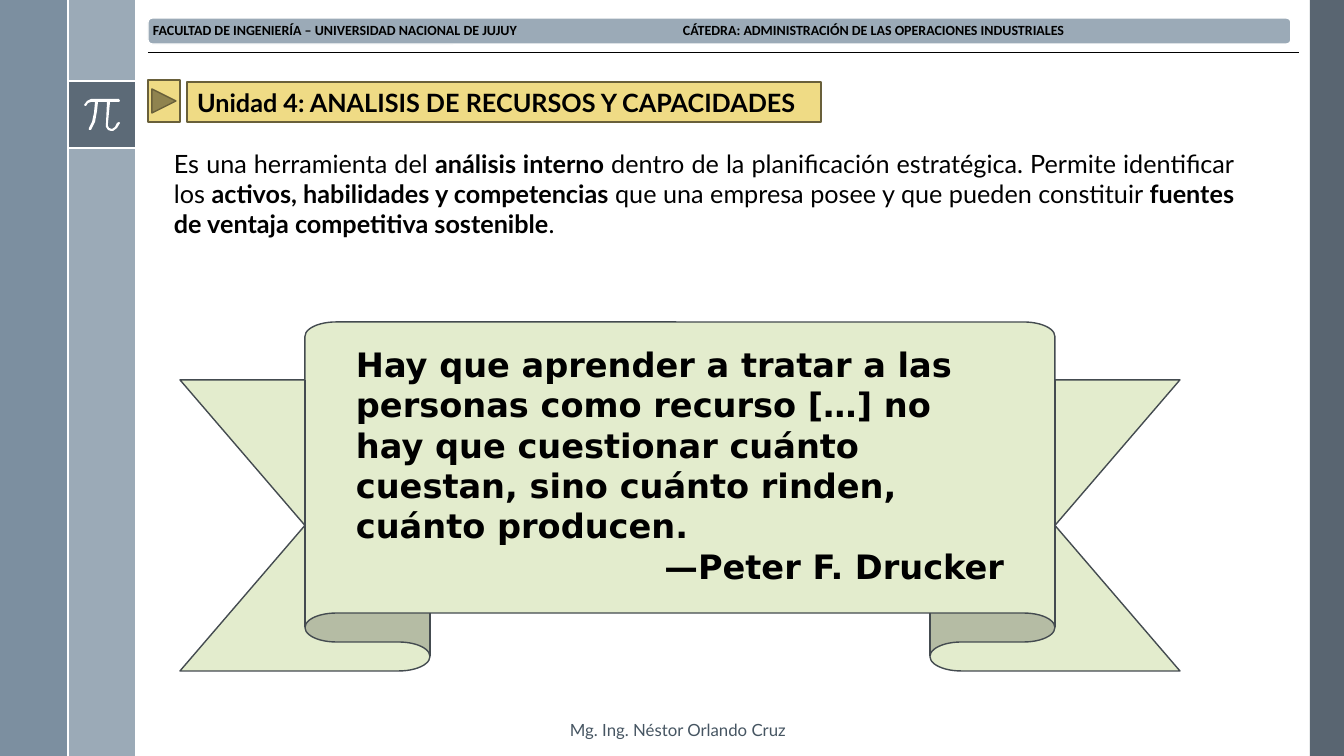
"""Build a course slide on resources and abilities with a quote on a ribbon."""
from lxml.etree import SubElement
from pptx import Presentation
from pptx.dml.color import RGBColor
from pptx.enum.shapes import MSO_CONNECTOR, MSO_SHAPE
from pptx.enum.text import MSO_ANCHOR, MSO_AUTO_SIZE, PP_ALIGN
from pptx.oxml.ns import qn
from pptx.util import Pt

WIDE, HIGH = 1344, 756
SCALE = 12192000 / WIDE
BLACK = RGBColor(0x00, 0x00, 0x00)
WHITE = RGBColor(0xFF, 0xFF, 0xFF)
SLATE = RGBColor(0x47, 0x55, 0x62)
STEEL = RGBColor(0x6A, 0x80, 0x93)
MIST = RGBColor(0x9B, 0xAA, 0xB7)
GOLD = RGBColor(0xEF, 0xDB, 0x85)
BROWN = RGBColor(0x69, 0x60, 0x3A)
GREEN = RGBColor(0xE3, 0xEC, 0xCD)
EDGE = RGBColor(0x44, 0x4B, 0x50)
GRAY = RGBColor(0x46, 0x55, 0x62)

PI_SIGN = [
    (119, 99), (91, 99), (87, 101), (84, 105), (85, 106), (86, 106),
    (88, 103), (91, 102), (95, 102), (94, 113), (92, 122), (89, 128),
    (89, 130), (90, 130), (91, 130), (95, 122), (97, 111), (98, 102),
    (107, 102), (106, 123), (106, 127), (108, 130), (111, 131), (113, 131),
    (117, 128), (120, 123), (119, 122), (117, 123), (115, 127), (112, 129),
    (109, 128), (108, 126), (108, 123), (110, 102), (119, 102), (120, 101),
]


def px(*sizes):
    """Turn px lengths into EMU."""
    return [round(size * SCALE) for size in sizes]


def paint(shape, fill, line=None, weight=1, alpha=100):
    """Set the fill, outline and opacity of a shape."""
    shape.fill.solid()
    shape.fill.fore_color.rgb = fill
    if alpha < 100:
        color = shape.fill._xPr.find(qn("a:solidFill"))[0]
        SubElement(color, qn("a:alpha"), val=str(alpha * 1000))
    if line is None:
        shape.line.fill.background()
    else:
        shape.line.color.rgb = line
        shape.line.width = Pt(weight)


def add_block(slide, kind, box, *style, alpha=100):
    """Add a painted preset shape."""
    shape = slide.shapes.add_shape(kind, *px(*box))
    shape.shadow.inherit = False
    paint(shape, *style, alpha=alpha)
    return shape


def add_rule(slide, ends, color, weight):
    """Add a straight line."""
    rule = slide.shapes.add_connector(MSO_CONNECTOR.STRAIGHT, *px(*ends))
    rule.line.color.rgb = color
    rule.line.width = Pt(weight)
    SubElement(rule._element.spPr, qn("a:effectLst"))


def style_run(run, font, size, color, bold):
    """Set the font of a run."""
    run.font.name = font
    run.font.size = Pt(size)
    run.font.color.rgb = color
    run.font.bold = bold


def add_text(slide, box, lines, font, size, color=BLACK):
    """Add a text box from lines of (align, [(text, bold), ...])."""
    frame = slide.shapes.add_textbox(*px(*box)).text_frame
    frame.word_wrap = True
    for place, (align, parts) in enumerate(lines):
        para = frame.add_paragraph() if place else frame.paragraphs[0]
        para.alignment = align
        for text, bold in parts:
            run = para.add_run()
            run.text = text
            style_run(run, font, size, color, bold)
    return frame


def add_side(slide):
    """Add the side bands and the pi sign."""
    rect = MSO_SHAPE.RECTANGLE
    add_block(slide, rect, (1310, 0, 34, HIGH), SLATE, alpha=90)
    add_block(slide, rect, (68, 0, 67, HIGH), MIST)
    add_block(slide, rect, (0, 0, 68, HIGH), STEEL, alpha=88)
    add_block(slide, rect, (68, 81, 67, 67), SLATE, alpha=75)
    for top in (81, 148):
        add_rule(slide, (68, top, 135, top), WHITE, 1.5)
    pen = slide.shapes.build_freeform(*PI_SIGN[0], scale=SCALE)
    pen.add_line_segments(PI_SIGN[1:])
    sign = pen.convert_to_shape()
    sign.shadow.inherit = False
    paint(sign, WHITE)
    add_rule(slide, (68, 0, 68, HIGH), WHITE, 1.5)


def add_head(slide):
    """Add the head bar with its two labels."""
    add_block(slide, MSO_SHAPE.ROUNDED_RECTANGLE, (148, 18, 1143, 26),
              MIST, WHITE)
    labels = ("FACULTAD DE INGENIERÍA – UNIVERSIDAD NACIONAL DE JUJUY\t"
              "CÁTEDRA: ADMINISTRACIÓN DE LAS OPERACIONES INDUSTRIALES")
    frame = add_text(slide, (149, 19, 1140, 24),
                     [(PP_ALIGN.LEFT, [(labels, True)])], "Calibri", 10)
    frame.vertical_anchor = MSO_ANCHOR.MIDDLE
    frame.margin_left = frame.margin_right = px(4)[0]
    frame.margin_top = frame.margin_bottom = px(4)[0]
    para = frame.paragraphs[0]
    para.line_spacing = 0.9
    tabs = SubElement(para._p.get_or_add_pPr(), qn("a:tabLst"))
    SubElement(tabs, qn("a:tab"), pos=str(px(530)[0]), algn="l")
    add_rule(slide, (148, 52, 1299, 52), BLACK, 0.5)


def set_title(slide):
    """Place and format the title."""
    title = slide.shapes.title
    title.left, title.top, title.width, title.height = px(187, 82, 634, 40)
    paint(title, GOLD, BROWN)
    frame = title.text_frame
    frame.text = "Unidad 4: ANALISIS DE RECURSOS Y CAPACIDADES"
    frame.auto_size = MSO_AUTO_SIZE.NONE
    frame.word_wrap = True
    frame.vertical_anchor = MSO_ANCHOR.MIDDLE
    para = frame.paragraphs[0]
    para.alignment = PP_ALIGN.LEFT
    style_run(para.runs[0], "Lato", 18, BLACK, True)


def main():
    """Build and save the slide."""
    deck = Presentation()
    deck.slide_width, deck.slide_height = px(WIDE, HIGH)
    slide = deck.slides.add_slide(deck.slide_layouts[5])
    add_side(slide)
    add_text(slide, (560, 715, 326, 30),
             [(PP_ALIGN.LEFT, [("Mg. Ing. Néstor Orlando Cruz", False)])],
             "Lato", 12, GRAY)
    add_head(slide)
    set_title(slide)
    add_block(slide, MSO_SHAPE.ACTION_BUTTON_FORWARD_OR_NEXT,
              (148, 80, 32, 42), GOLD, BROWN)
    add_text(slide, (164, 143, 1080, 102), [(PP_ALIGN.JUSTIFY, [
        ("Es una herramienta del ", False),
        ("análisis interno", True),
        (" dentro de la planificación estratégica. "
         "Permite identificar los ", False),
        ("activos, habilidades y competencias", True),
        (" que una empresa posee y que pueden constituir ", False),
        ("fuentes de ventaja competitiva sostenible", True),
        (".", False),
    ])], "Lato", 18)
    ribbon = add_block(slide, MSO_SHAPE.UP_RIBBON, (180, 322, 1000, 349),
                       GREEN, EDGE)
    ribbon.adjustments[0] = 0.166
    ribbon.adjustments[1] = 0.75
    quote = ("Hay que aprender a tratar a las personas como recurso […] "
             "no hay que cuestionar cuánto cuestan, sino cuánto rinden, "
             "cuánto producen.")
    add_text(slide, (346, 339, 668, 254), [
        (PP_ALIGN.LEFT, [(quote, True)]),
        (PP_ALIGN.RIGHT, [("—Peter F. Drucker", True)]),
    ], "DejaVu Sans", 24)
    deck.save("out.pptx")


if __name__ == "__main__":
    main()
